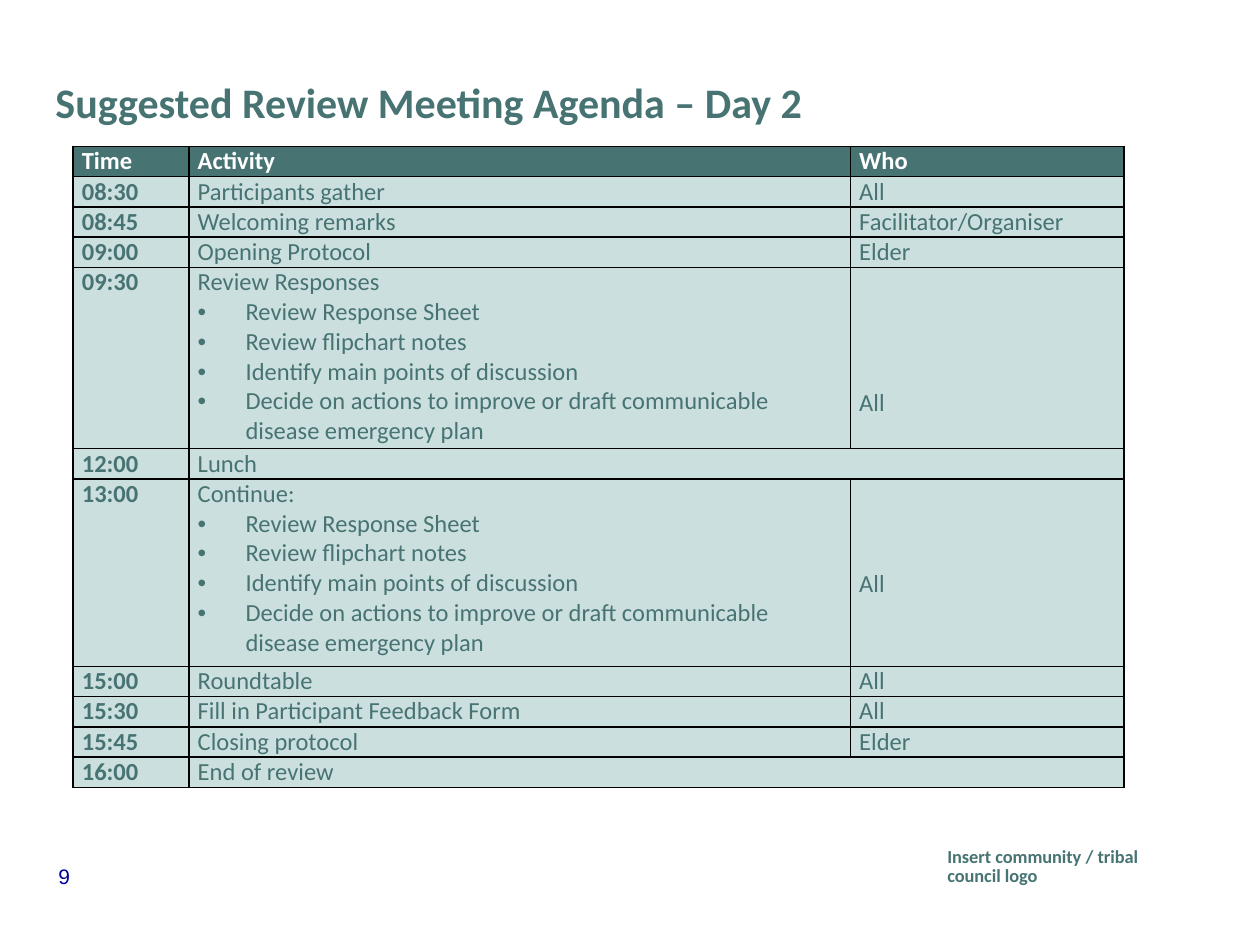
from dataclasses import dataclass

from lxml.etree import SubElement
from pptx import Presentation
from pptx.dml.color import RGBColor
from pptx.enum.text import MSO_ANCHOR, MSO_AUTO_SIZE, PP_ALIGN
from pptx.oxml.ns import qn
from pptx.util import Inches, Pt

TEAL = RGBColor(0x47, 0x73, 0x73)
PALE = RGBColor(0xCC, 0xDF, 0xDF)
WHITE = RGBColor(0xFF, 0xFF, 0xFF)
NAVY = RGBColor(0x00, 0x00, 0xA3)

WIDTH, HEIGHT = Inches(10), Inches(7.5)
LINE = Inches(0.24)  # height of one agenda line
COLUMNS = (0.092, 0.525, 0.217)  # shares of the slide width
BULLET_INDENT = Inches(0.38)


@dataclass(frozen=True)
class Session:
    time: str
    activity: str
    who: str = ""  # when empty, the activity spans the last two columns
    points: tuple[str, ...] = ()
    lines: float = 1
    who_line: int = 0


POINTS = (
    "Review Response Sheet",
    "Review flipchart notes",
    "Identify main points of discussion",
    "Decide on actions to improve or draft communicable disease emergency plan",
)
AGENDA = (
    Session("Time", "Activity", "Who"),
    Session("08:30", "Participants gather", "All"),
    Session("08:45", "Welcoming remarks", "Facilitator/Organiser"),
    Session("09:00", "Opening Protocol", "Elder"),
    Session("09:30", "Review Responses", "All", POINTS, lines=6, who_line=4),
    Session("12:00", "Lunch"),
    Session("13:00", "Continue:", "All", POINTS, lines=6.2, who_line=3),
    Session("15:00", "Roundtable", "All"),
    Session("15:30", "Fill in Participant Feedback Form", "All"),
    Session("15:45", "Closing protocol", "Elder"),
    Session("16:00", "End of review"),
)


def box(x: float, y: float, w: float, h: float) -> tuple[int, ...]:
    """Turn shares of the slide's size into left, top, width and height."""
    return tuple(round(v) for v in (x * WIDTH, y * HEIGHT, w * WIDTH, h * HEIGHT))


def write(p, text: str, size: float, color: RGBColor, bold=False, name="Calibri", **layout) -> None:
    """Fill a paragraph; layout holds paragraph attributes."""
    for key, value in layout.items():
        setattr(p, key, value)
    r = p.add_run()
    r.text = text
    for key, value in {"size": Pt(size), "bold": bold, "name": name}.items():
        setattr(r.font, key, value)
    r.font.color.rgb = color


def add_label(slide, place: tuple[int, ...], text: str, size: float, color: RGBColor, **style):
    tf = slide.shapes.add_textbox(*place).text_frame
    tf.word_wrap = True
    write(tf.paragraphs[0], text, size, color, line_spacing=0.9, **style)
    return tf


def add_bullet(p) -> None:
    pPr = p._p.get_or_add_pPr()
    pPr.set("marL", str(BULLET_INDENT))
    pPr.set("indent", str(-BULLET_INDENT))
    SubElement(pPr, qn("a:buFont"), typeface="Arial")
    SubElement(pPr, qn("a:buChar"), char="•")


def format_cell(cell, fill: RGBColor) -> None:
    tcPr = cell._tc.get_or_add_tcPr()
    for side in ("lnL", "lnR", "lnT", "lnB"):
        ln = SubElement(tcPr, qn(f"a:{side}"), w=str(Pt(1)))
        SubElement(SubElement(ln, qn("a:solidFill")), qn("a:srgbClr"), val="000000")
    cell.fill.solid()
    cell.fill.fore_color.rgb = fill
    margins = {"left": Inches(0.07), "right": Inches(0.07), "top": 0, "bottom": 0}
    for side, value in margins.items():
        setattr(cell, f"margin_{side}", value)


def add_agenda(slide, sessions: tuple[Session, ...]) -> None:
    height = sum(s.lines for s in sessions) * LINE / HEIGHT
    place = box(0.058, 0.155, sum(COLUMNS), height)
    table = slide.shapes.add_table(len(sessions), len(COLUMNS), *place).table
    for column, share in zip(table.columns, COLUMNS):
        column.width = round(share * WIDTH)
    for i, session in enumerate(sessions):
        table.rows[i].height = round(session.lines * LINE)
        header = i == 0
        color = WHITE if header else TEAL
        cells = [table.cell(i, j) for j in range(len(COLUMNS))]
        for cell in cells:
            format_cell(cell, TEAL if header else PALE)
        if not session.who:
            cells[1].merge(cells[2])
        cells[2].margin_top = session.who_line * LINE
        texts = (session.time, session.activity, session.who)
        for j, (cell, text) in enumerate(zip(cells, texts)):
            if text:
                write(cell.text_frame.paragraphs[0], text, 14, color, header or j == 0)
        for point in session.points:
            p = cells[1].text_frame.add_paragraph()
            add_bullet(p)
            write(p, point, 14, color)


def main() -> None:
    prs = Presentation()
    prs.slide_width, prs.slide_height = WIDTH, HEIGHT
    slide = prs.slides.add_slide(prs.slide_layouts[5])

    title = slide.shapes.title
    title.left, title.top, title.width, title.height = box(0.044, 0.09, 0.858, 0.044)
    tf = title.text_frame
    frame = {"margin_left": 0, "margin_right": 0, "margin_top": 0, "margin_bottom": 0,
             "vertical_anchor": MSO_ANCHOR.MIDDLE, "auto_size": MSO_AUTO_SIZE.NONE}
    for key, value in frame.items():
        setattr(tf, key, value)
    write(tf.paragraphs[0], "Suggested Review Meeting Agenda – Day 2", 24, TEAL, True,
          alignment=PP_ALIGN.LEFT, line_spacing=Pt(24))

    add_agenda(slide, AGENDA)
    add_label(slide, box(0.004, 0.91, 0.094, 0.04), "9", 12, NAVY,
              name="Arial", alignment=PP_ALIGN.CENTER)
    logo_note = add_label(slide, box(0.742, 0.89, 0.217, 0.056),
                          "Insert community / tribal council logo", 10.5, TEAL, bold=True)
    logo_note.margin_right = Inches(0.2)
    prs.save("out.pptx")


if __name__ == "__main__":
    main()
